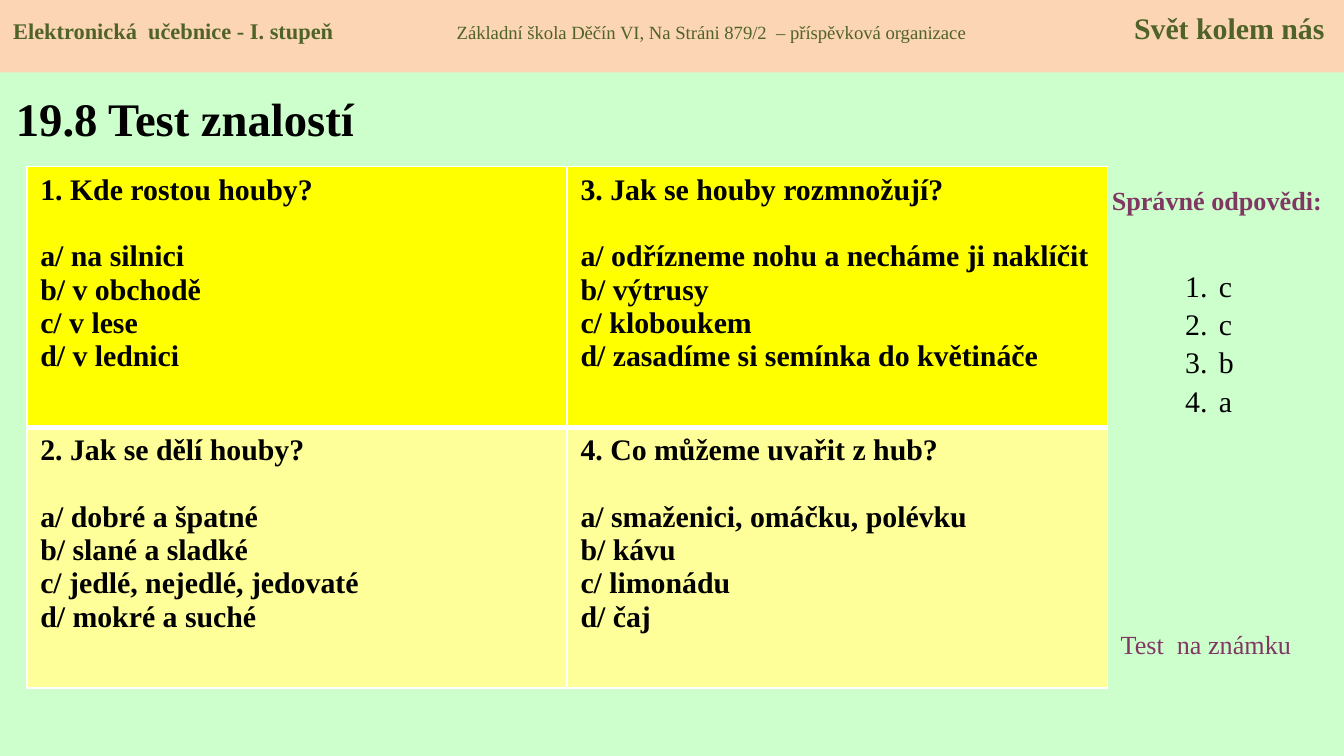
import pptx
import pptx.dml.color
import pptx.enum.shapes
import pptx.enum.text
import pptx.oxml
import pptx.oxml.ns
import pptx.util
from lxml import etree

COLORS = {
    "background": "CCFFCC", "band": "FCD5B5", "olive": "4F6228", "plum": "813763",
    "black": "000000", "white": "FFFFFF", "yellow": "FFFF00", "pale": "FFFF99",
}
CELL = 0.1  # inches per grid column and row
QUESTIONS = [
    [
        ["1. Kde rostou houby?", "a/ na silnici", "b/ v obchodě", "c/ v lese", "d/ v lednici"],
        ["3. Jak se houby rozmnožují?", "a/ odřízneme nohu a necháme ji naklíčit",
         "b/ výtrusy", "c/ kloboukem", "d/ zasadíme si semínka do květináče"],
    ],
    [
        ["2. Jak se dělí houby?", "a/ dobré a špatné", "b/ slané a sladké",
         "c/ jedlé, nejedlé, jedovaté", "d/ mokré a suché"],
        ["4. Co můžeme uvařit z hub?", "a/ smaženici, omáčku, polévku",
         "b/ kávu", "c/ limonádu", "d/ čaj"],
    ],
]


def grid(units):
    return pptx.util.Inches(units * CELL)


def rgb(name):
    return pptx.dml.color.RGBColor.from_string(COLORS[name])


def add_element(parent, tag, **attributes):
    element = etree.SubElement(parent, pptx.oxml.ns.qn(tag))
    for key, value in attributes.items():
        element.set(key, str(value))
    return element


class TestSlide:
    font_name = "Times New Roman"

    def __init__(self, presentation):
        self.slide = presentation.slides.add_slide(presentation.slide_layouts[6])
        fill = self.slide.background.fill
        fill.solid()
        fill.fore_color.rgb = rgb("background")

    def style(self, paragraph, size, color, bold=False):
        font = paragraph.font
        font.name, font.size, font.bold = self.font_name, pptx.util.Pt(size), bold
        font.color.rgb = rgb(color)

    def text(self, box, lines, size, color, bold=False, align="LEFT", anchor="TOP", numbered=False):
        shape = self.slide.shapes.add_textbox(*map(grid, box))
        frame = shape.text_frame
        frame.word_wrap = True
        frame.vertical_anchor = pptx.enum.text.MSO_ANCHOR[anchor]
        frame.text = "\n".join(lines)
        for index, paragraph in enumerate(frame.paragraphs):
            paragraph.alignment = pptx.enum.text.PP_ALIGN[align]
            if numbered:
                if index:
                    paragraph.space_before = pptx.util.Pt(1.3)
                self.number(paragraph)
            self.style(paragraph, size, color, bold)
        return frame

    def number(self, paragraph):
        properties = paragraph._p.get_or_add_pPr()
        properties.set("marL", str(grid(2.5)))
        properties.set("indent", str(-grid(2.5)))
        add_element(properties, "a:buFont", typeface=self.font_name)
        add_element(properties, "a:buAutoNum", type="arabicPeriod")

    def header(self, box, parts, tabs):
        """Draw a filled band with one line of (text, size, bold) parts set at tab stops."""
        shape = self.slide.shapes.add_shape(
            pptx.enum.shapes.MSO_SHAPE.RECTANGLE, *map(grid, box))
        shape.shadow.inherit = False
        shape.fill.solid()
        shape.fill.fore_color.rgb = rgb("band")
        shape.line.fill.background()
        frame = shape.text_frame
        frame.margin_top = grid(0.7)
        frame.vertical_anchor = pptx.enum.text.MSO_ANCHOR.TOP
        paragraph = frame.paragraphs[0]
        paragraph.alignment = pptx.enum.text.PP_ALIGN.LEFT
        tab_list = add_element(paragraph._p.get_or_add_pPr(), "a:tabLst")
        for position, align in tabs:
            add_element(tab_list, "a:tab", pos=grid(position), algn=align)
        paragraph.font.name = self.font_name
        paragraph.font.color.rgb = rgb("olive")
        for index, (words, size, bold) in enumerate(parts):
            run = paragraph.add_run()
            run.text = "\t" + words if index else words
            run.font.size, run.font.bold = pptx.util.Pt(size), bold

    def table(self, box, rows, fills):
        table = self.slide.shapes.add_table(len(rows), len(rows[0]), *map(grid, box)).table
        for row_index, row in enumerate(rows):
            for column_index, lines in enumerate(row):
                cell = table.cell(row_index, column_index)
                cell.text = "\n".join(lines)
                for paragraph in cell.text_frame.paragraphs:
                    self.style(paragraph, 16, "black", True)
                cell.text_frame.paragraphs[0].space_after = pptx.util.Pt(18)
                self.borders(cell, top=3 if row_index else 1,
                             bottom=1 if row_index == len(rows) - 1 else 3)
                cell.fill.solid()
                cell.fill.fore_color.rgb = rgb(fills[row_index])

    def borders(self, cell, top, bottom):
        properties = cell._tc.get_or_add_tcPr()
        for side, width in (("L", 1), ("R", 1), ("T", top), ("B", bottom)):
            line = add_element(properties, f"a:ln{side}", w=pptx.util.Pt(width))
            add_element(add_element(line, "a:solidFill"), "a:srgbClr", val=COLORS["white"])


def main():
    presentation = pptx.Presentation()
    presentation.slide_width, presentation.slide_height = grid(100), grid(56.25)
    page = TestSlide(presentation)

    page.text((0.2, 5.5, 31.9, 6.5), ["19.8 Test znalostí"], 25, "black", True, anchor="MIDDLE")
    page.text((81.1, 13.2, 18.9, 3.4), ["Správné odpovědi:"], 14, "plum", True, align="CENTER")
    page.table((2, 12.4, 80.4, 38.8), QUESTIONS, ["yellow", "pale"])
    answers = page.text((87.2, 16.5, 5.5, 19.9), ["c", "c", "b", "a"], 16, "black", numbered=True)
    answers.margin_top = grid(3.4)
    page.text((82.4, 46.3, 15.7, 3.4), ["Test  na známku"], 14, "plum")
    page.header(
        (0, 0, 100, 5.4),
        [("Elektronická  učebnice - I. stupeň", 12, True),
         ("Základní škola Děčín VI, Na Stráni 879/2  – příspěvková organizace", 10, False),
         ("Svět kolem nás", 16, True)],
        [(33, "l"), (83.4, "l")])

    presentation.save("out.pptx")


if __name__ == "__main__":
    main()
